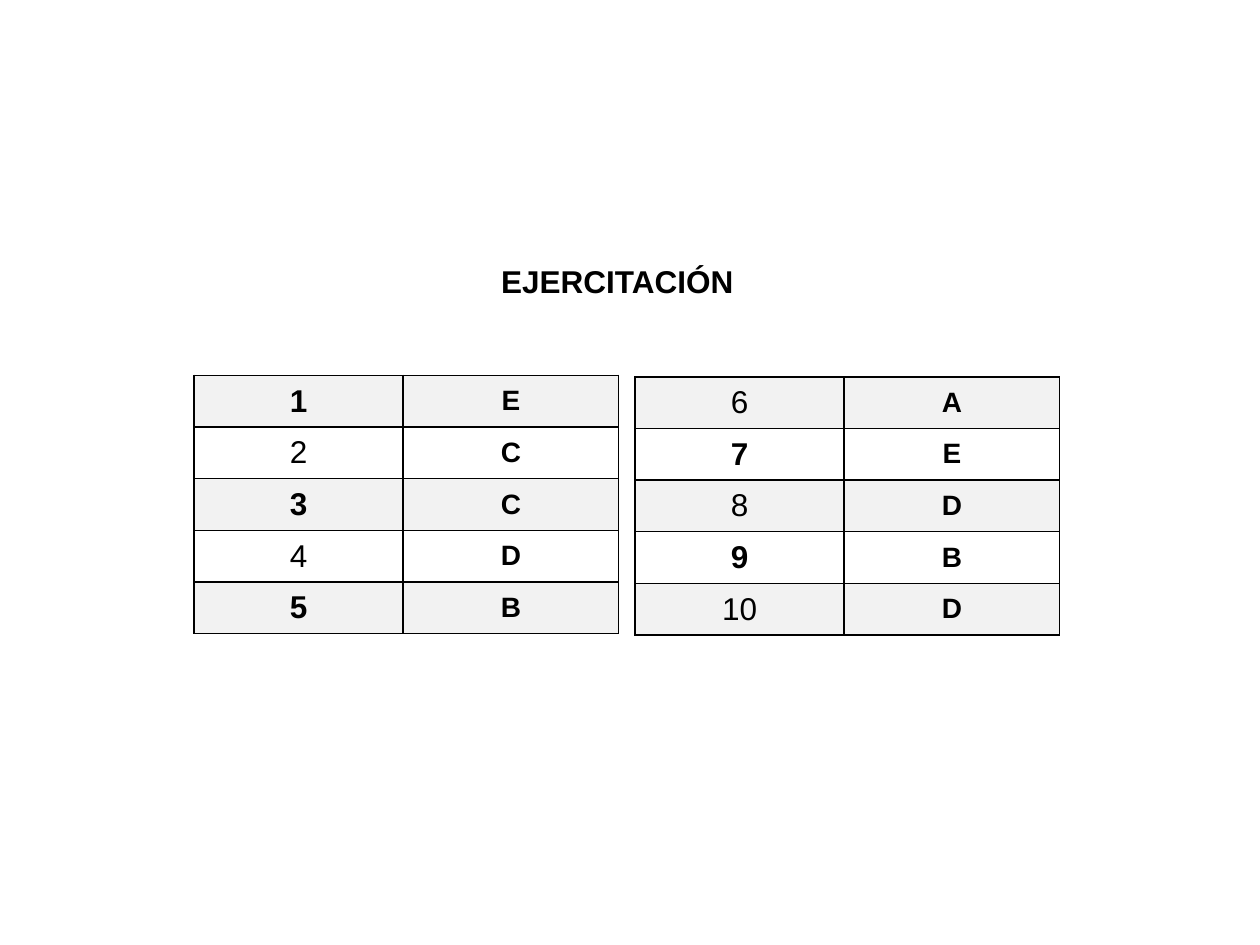
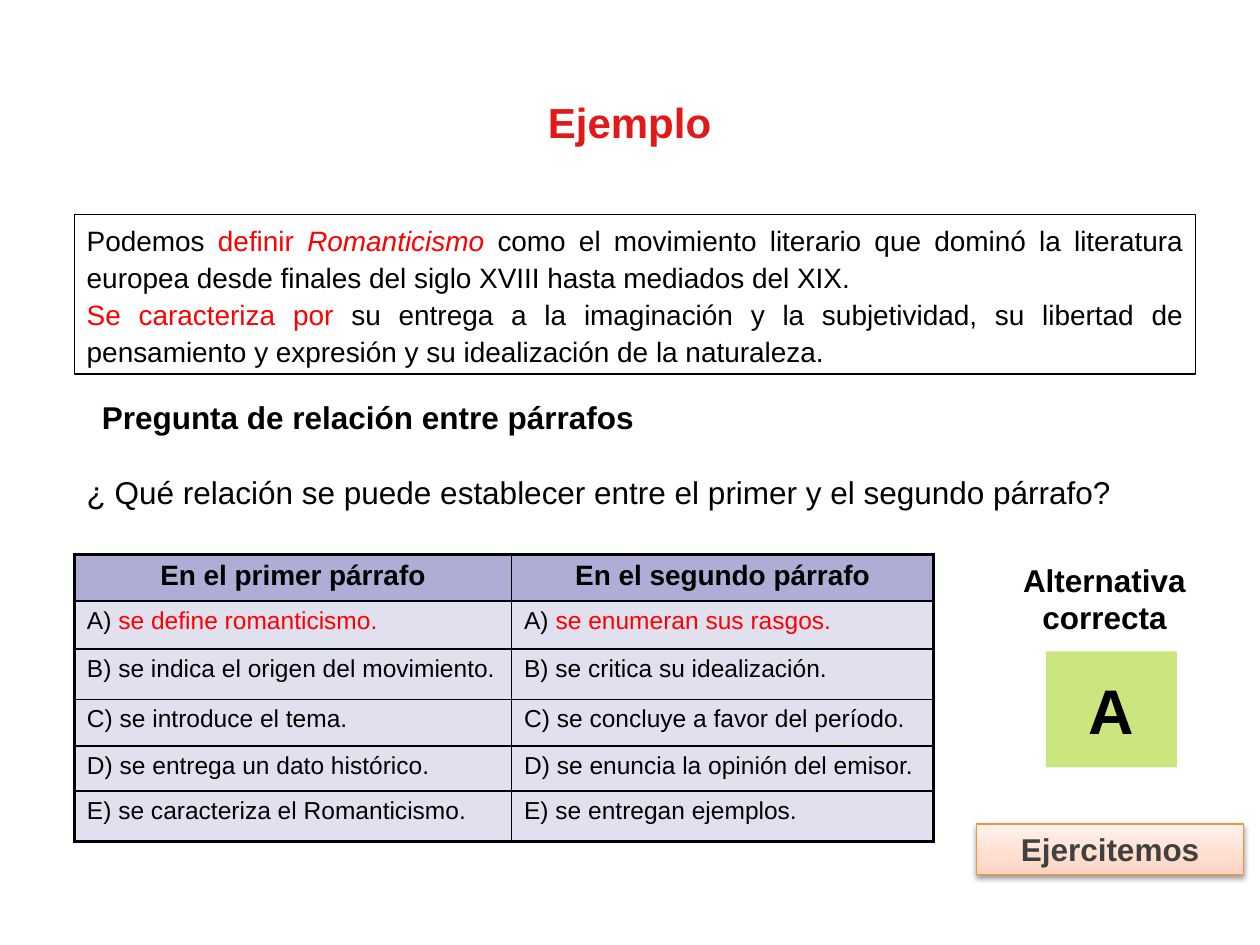
import pptx
import pptx.util
import pptx.dml.color
import pptx.enum.shapes
import pptx.enum.text
import pptx.oxml
import pptx.oxml.ns
from lxml import etree

Inches = pptx.util.Inches
Pt = pptx.util.Pt
RGBColor = pptx.dml.color.RGBColor
Align = pptx.enum.text.PP_ALIGN
Anchor = pptx.enum.text.MSO_ANCHOR
qn = pptx.oxml.ns.qn

BLACK = RGBColor(0x00, 0x00, 0x00)
RED = RGBColor(0xFF, 0x00, 0x00)
TITLE_RED = RGBColor(0xE3, 0x18, 0x18)
STRIPE = RGBColor(0xF2, 0xF2, 0xF2)
INDIGO = RGBColor(0x33, 0x33, 0x99)
LIME = RGBColor(0x99, 0xCC, 0x00)
ORANGE = RGBColor(0xF6, 0x92, 0x40)
CHARCOAL = RGBColor(0x40, 0x40, 0x40)
PEACHES = ((0, RGBColor(0xFF, 0xD2, 0xBD)),
           (35, RGBColor(0xFF, 0xDE, 0xD0)),
           (100, RGBColor(0xFF, 0xF2, 0xED)))
DRAWING = 'xmlns:a="http://schemas.openxmlformats.org/drawingml/2006/main"'
THIN, THICK = 1, 2.25


def apply(target, formats):
    for name, value in formats.items():
        setattr(target, name, value)


def write(para, spans, para_format=None, **base):
    apply(para, para_format or {})
    for words, changes in spans:
        style = {"name": "Arial", "size": 18, "color": BLACK, **base, **changes}
        span = para.add_run()
        span.text = words
        span.font.color.rgb = style.pop("color")
        style["size"] = Pt(style["size"])
        apply(span.font, style)


def fill_solid(fill, color, opacity=100):
    fill.solid()
    fill.fore_color.rgb = color
    if opacity < 100:
        color_node = fill._xPr.find(qn("a:solidFill"))[0]
        etree.SubElement(color_node, qn("a:alpha"), val=str(opacity * 1000))


def add_text(page, box, wrap=True):
    frame = page.shapes.add_textbox(*map(Inches, box)).text_frame
    frame.word_wrap = wrap
    return frame


def add_rectangle(page, box):
    shape = page.shapes.add_shape(
        pptx.enum.shapes.MSO_SHAPE.RECTANGLE, *map(Inches, box))
    shape.shadow.inherit = False
    shape.fill.background()
    shape.line.fill.background()
    return shape


def outline(shape, color):
    shape.line.color.rgb = color
    shape.line.width = Pt(0.75)


def add_grid(page, left, top, widths, heights):
    frame = page.shapes.add_table(
        len(heights), len(widths), Inches(left), Inches(top),
        Inches(sum(widths)), Inches(sum(heights)))
    table = frame.table
    apply(table, {"first_row": False, "horz_banding": False})
    for column, width in zip(table.columns, widths):
        column.width = Inches(width)
    for row, height in zip(table.rows, heights):
        row.height = Inches(height)
    return table


def border_cell(cell, left=THIN, right=THIN, top=THIN, bottom=THIN):
    properties = cell._tc.get_or_add_tcPr()
    for side, width in zip("LRTB", (left, right, top, bottom)):
        properties.append(pptx.oxml.parse_xml(
            f'<a:ln{side} {DRAWING} w="{Pt(width)}"><a:solidFill>'
            f'<a:srgbClr val="{BLACK}"/></a:solidFill></a:ln{side}>'))


def answer_table(page, left, top, first, answers):
    table = add_grid(page, left, top, (1.66, 1.71), [0.41] * len(answers))
    margins = {f"margin_{side}": 0 for side in ("left", "right", "top", "bottom")}
    for index, answer in enumerate(answers):
        number = first + index
        entries = ((str(number), 18, number % 2 == 1), (answer, 16, True))
        for column, (words, size, bold) in enumerate(entries):
            cell = table.cell(index, column)
            border_cell(cell)
            apply(cell, {**margins, "vertical_anchor": Anchor.MIDDLE})
            if index % 2 == 0:
                fill_solid(cell.fill, STRIPE)
            else:
                cell.fill.background()
            write(cell.text_frame.paragraphs[0], [(words, {})],
                  {"alignment": Align.CENTER}, size=size, bold=bold)


def answers_slide(page):
    answer_table(page, 1.54, 2.98, 1, "ECCDB")
    answer_table(page, 5.04, 2.99, 6, "AEDBD")
    frame = add_text(page, (3.88, 2.03, 2.06, 0.4), wrap=False)
    write(frame.paragraphs[0], [("EJERCITACIÓN", {})], bold=True)


def passage(page, box):
    shape = add_rectangle(page, box)
    outline(shape, BLACK)
    frame = shape.text_frame
    apply(frame, {"word_wrap": True, "vertical_anchor": Anchor.TOP})
    layout = {"alignment": Align.JUSTIFY, "line_spacing": 1.1}
    red = {"color": RED}
    write(frame.paragraphs[0], [
        ("Podemos ", {}),
        ("definir ", red),
        ("Romanticismo ", {**red, "italic": True}),
        ("como el movimiento literario que dominó la literatura europea "
         "desde finales del siglo XVIII hasta mediados del XIX.", {}),
    ], layout, size=16)
    write(frame.add_paragraph(), [
        ("Se caracteriza por ", red),
        ("su entrega a la imaginación y la subjetividad, su libertad de "
         "pensamiento y expresión y su idealización de la naturaleza.", {}),
    ], layout, size=16)


def question(page, box):
    frame = add_text(page, box)
    heading = frame.paragraphs[0]
    heading._p.get_or_add_pPr().set("marL", str(Inches(0.12)))
    write(heading, [("Pregunta de relación entre párrafos", {})], bold=True)
    write(frame.add_paragraph(),
          [("¿ Qué relación se puede establecer entre el primer y el segundo párrafo?", {})],
          {"space_before": Pt(21.5)})


def options_table(page, left, top):
    columns = (
        ("En el primer párrafo", "se define romanticismo.",
         "se indica el origen del movimiento.", "se introduce el tema.",
         "se entrega un dato histórico.", "se caracteriza el Romanticismo."),
        ("En el segundo párrafo", "se enumeran sus rasgos.",
         "se critica su idealización.", "se concluye a favor del período.",
         "se enuncia la opinión del emisor.", "se entregan ejemplos."),
    )
    heights = (0.37, 0.38, 0.4, 0.37, 0.36, 0.4)
    table = add_grid(page, left, top, (3.47, 3.35), heights)
    last = len(heights) - 1
    for column, entries in enumerate(columns):
        for row, words in enumerate(entries):
            cell = table.cell(row, column)
            border_cell(cell,
                        left=THIN if column else THICK,
                        right=THICK if column else THIN,
                        top=THIN if row else THICK,
                        bottom=THICK if row == last else THIN)
            fill_solid(cell.fill, INDIGO, 15 if row else 40)
            para = cell.text_frame.paragraphs[0]
            if row == 0:
                write(para, [(words, {})], {"alignment": Align.CENTER},
                      size=16, bold=True)
            else:
                color = RED if row == 1 else BLACK
                write(para, [(f"{'ABCDE'[row - 1]}) ", {}),
                             (words, {"color": color})], size=14)


def correct_answer(page, left, top):
    centred = {"alignment": Align.CENTER}
    square = add_rectangle(page, (left + 0.28, top + 0.77, 1.04, 0.92))
    fill_solid(square.fill, LIME, 50)
    apply(square.text_frame, {"word_wrap": False, "vertical_anchor": Anchor.MIDDLE})
    write(square.text_frame.paragraphs[0], [("A", {})], centred, size=36, bold=True)
    frame = add_text(page, (left, top, 1.49, 0.7), wrap=False)
    write(frame.paragraphs[0], [("Alternativa", {})], centred, bold=True)
    write(frame.add_paragraph(), [("correcta", {})], centred, bold=True)


def practice_button(page, box):
    button = add_rectangle(page, box)
    outline(button, ORANGE)
    properties = button._element.spPr
    stops = "".join(f'<a:gs pos="{position * 1000}"><a:srgbClr val="{color}"/></a:gs>'
                    for position, color in PEACHES)
    gradient = pptx.oxml.parse_xml(
        f'<a:gradFill {DRAWING} rotWithShape="1"><a:gsLst>{stops}</a:gsLst>'
        '<a:lin ang="16200000" scaled="1"/></a:gradFill>')
    properties.replace(properties.find(qn("a:noFill")), gradient)
    properties.find(qn("a:effectLst")).append(pptx.oxml.parse_xml(
        f'<a:outerShdw {DRAWING} blurRad="{Pt(3.1)}" dist="{Pt(1.6)}" dir="5400000" '
        f'rotWithShape="0"><a:srgbClr val="{BLACK}"><a:alpha val="38000"/>'
        '</a:srgbClr></a:outerShdw>'))
    apply(button.text_frame, {"word_wrap": True, "vertical_anchor": Anchor.TOP})
    write(button.text_frame.paragraphs[0], [("Ejercitemos", {})],
          {"alignment": Align.CENTER}, bold=True, color=CHARCOAL)


def example_slide(page):
    frame = add_text(page, (4.25, 0.72, 2.05, 0.5))
    write(frame.paragraphs[0], [("Ejemplo", {})], size=24, bold=True, color=TITLE_RED)
    passage(page, (0.59, 1.7, 8.9, 1.27))
    question(page, (0.59, 3.11, 8.9, 1.01))
    options_table(page, 0.59, 4.4)
    correct_answer(page, 8.02, 4.4)
    practice_button(page, (7.75, 6.54, 2.12, 0.4))


def main():
    deck = pptx.Presentation()
    apply(deck, {"slide_width": Inches(10), "slide_height": Inches(7.5)})
    for build in (answers_slide, example_slide):
        build(deck.slides.add_slide(deck.slide_layouts[6]))
    deck.save("out.pptx")


if __name__ == "__main__":
    main()
